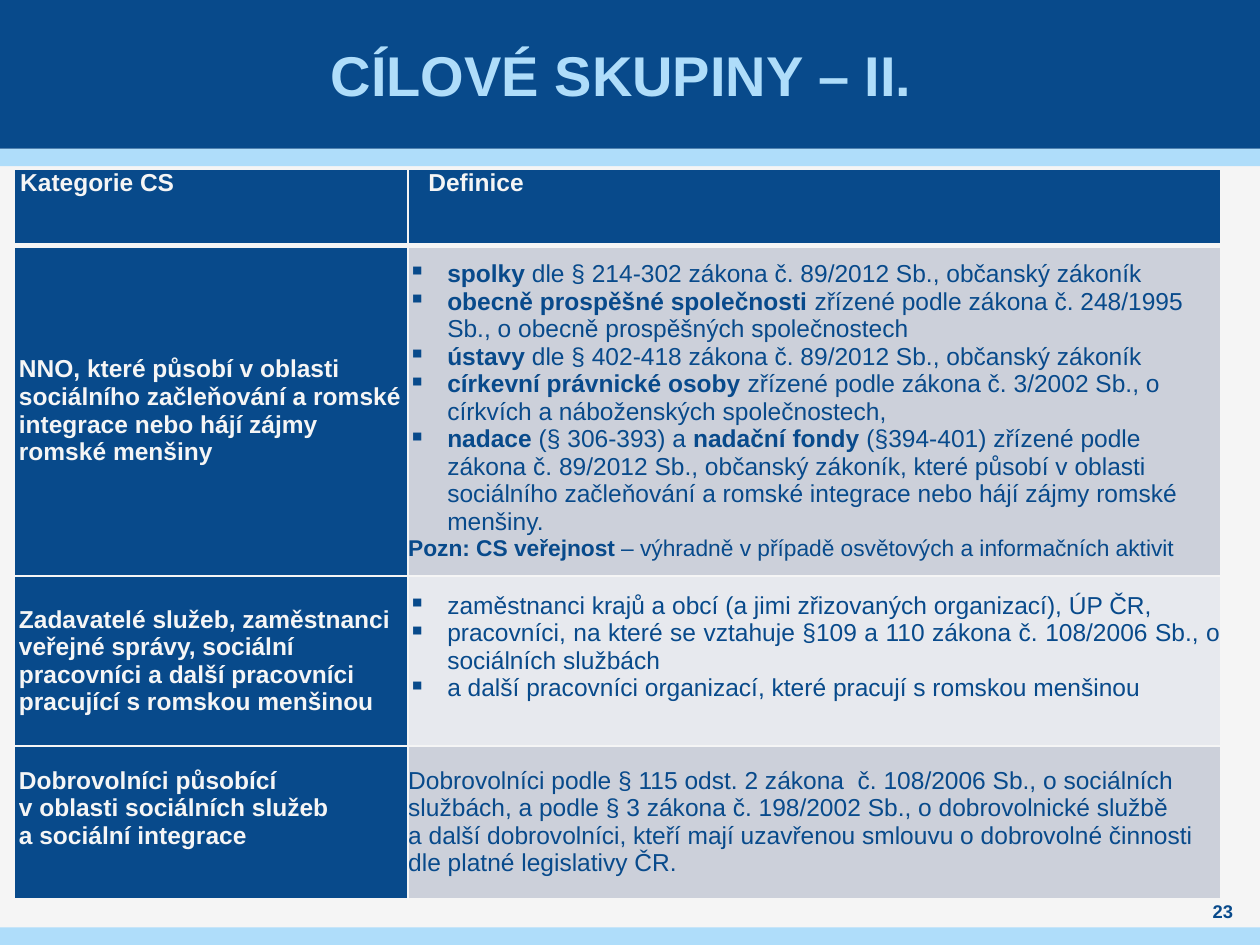
from dataclasses import dataclass

from lxml import etree
from pptx import Presentation
from pptx.dml.color import RGBColor
from pptx.enum.shapes import MSO_SHAPE
from pptx.enum.text import MSO_ANCHOR, PP_ALIGN
from pptx.oxml.ns import qn
from pptx.util import Inches, Pt

RECTANGLE = MSO_SHAPE.RECTANGLE
MIDDLE, TOP = MSO_ANCHOR.MIDDLE, MSO_ANCHOR.TOP
LEFT, CENTER, JUSTIFY = PP_ALIGN.LEFT, PP_ALIGN.CENTER, PP_ALIGN.JUSTIFY
TITLE_ONLY = 5


@dataclass(frozen=True)
class Theme:
    font: str = "Arial"
    navy: str = "084A8B"
    sky: str = "AFDDFA"
    paper: str = "F5F5F5"
    row_dark: str = "CCD0DA"
    row_light: str = "E7E9EE"
    title_size: float = 32
    body_size: float = 14
    note_size: float = 13
    number_size: float = 10.5
    border: float = 1
    header_border: float = 3


@dataclass(frozen=True)
class Line:
    """One paragraph; text between ** marks is bold."""
    text: str
    indent: float = 0
    bullet: bool = False
    align: PP_ALIGN = LEFT
    size: float = Theme.body_size


@dataclass(frozen=True)
class Cell:
    lines: list
    fill: str
    color: str
    anchor: MSO_ANCHOR = MIDDLE
    bottom: float = 0


class SlideBuilder:
    def __init__(self, slide, theme):
        self.slide = slide
        self.theme = theme
        background = slide.background.fill
        background.solid()
        background.fore_color.rgb = RGBColor.from_string(theme.paper)

    def band(self, top, height, color):
        shape = self.slide.shapes.add_shape(
            RECTANGLE, 0, Inches(top), Inches(10), Inches(height))
        shape.shadow.inherit = False
        shape.fill.solid()
        shape.fill.fore_color.rgb = RGBColor.from_string(color)
        shape.line.fill.background()

    def format_font(self, font, size, color, bold):
        font.name = self.theme.font
        font.size = Pt(size)
        font.bold = bold
        font.color.rgb = RGBColor.from_string(color)

    def single_line(self, shape, text, size, color, side_margin=0):
        frame = shape.text_frame
        frame.text = text
        frame.word_wrap = True
        frame.vertical_anchor = MIDDLE
        frame.margin_top = frame.margin_bottom = 0
        frame.margin_left = frame.margin_right = Inches(side_margin)
        paragraph = frame.paragraphs[0]
        paragraph.alignment = CENTER
        self.format_font(paragraph.runs[0].font, size, color, True)

    def title(self, text):
        title = self.slide.shapes.title
        title.left, title.top = Inches(0.39), 0
        title.width, title.height = Inches(9.21), Inches(1.18)
        self.single_line(title, text, self.theme.title_size, self.theme.sky, 0.04)
        # The title lies in front of the bands
        title.element.getparent().append(title.element)

    def page_number(self, text):
        box = self.slide.shapes.add_textbox(
            Inches(9.45), Inches(7.13), Inches(0.51), Inches(0.2))
        self.single_line(box, text, self.theme.number_size, self.theme.navy)

    def fill_paragraph(self, paragraph, line, color):
        paragraph.alignment = line.align
        properties = paragraph._p.get_or_add_pPr()
        properties.set("marL", str(Inches(line.indent)))
        properties.set("indent", str(-Inches(line.indent) if line.bullet else 0))
        if line.bullet:
            etree.SubElement(properties, qn("a:buChar"), char="▪")
        parts = line.text.split("**")
        if len(parts) == 1:
            paragraph.text = line.text
            for run in paragraph.runs:
                self.format_font(run.font, line.size, color, False)
            return
        for index, part in enumerate(parts):
            if part:
                run = paragraph.add_run()
                run.text = part
                self.format_font(run.font, line.size, color, index % 2 == 1)

    def cell_borders(self, cell, top, bottom):
        properties = cell._tc.get_or_add_tcPr()
        widths = {"lnL": self.theme.border, "lnR": self.theme.border,
                  "lnT": top, "lnB": bottom}
        for tag, width in widths.items():
            border = etree.SubElement(properties, qn(f"a:{tag}"), w=str(Pt(width)))
            fill = etree.SubElement(border, qn("a:solidFill"))
            etree.SubElement(fill, qn("a:srgbClr"), val=self.theme.paper)

    def table(self, left, top, widths, heights, rows):
        table = self.slide.shapes.add_table(
            len(rows), len(widths), Inches(left), Inches(top),
            Inches(sum(widths)), Inches(sum(heights))).table
        for column, width in zip(table.columns, widths):
            column.width = Inches(width)
        for row_index, (height, row) in enumerate(zip(heights, rows)):
            table.rows[row_index].height = Inches(height)
            for column_index, content in enumerate(row):
                cell = table.cell(row_index, column_index)
                cell.margin_left = cell.margin_right = cell.margin_top = 0
                cell.margin_bottom = Inches(content.bottom)
                cell.vertical_anchor = content.anchor
                self.cell_borders(
                    cell,
                    self.theme.header_border if row_index == 1 else self.theme.border,
                    self.theme.header_border if row_index == 0 else self.theme.border)
                cell.fill.solid()
                cell.fill.fore_color.rgb = RGBColor.from_string(content.fill)
                frame = cell.text_frame
                for index, line in enumerate(content.lines):
                    paragraph = frame.add_paragraph() if index else frame.paragraphs[0]
                    self.fill_paragraph(paragraph, line, content.color)


def heading(*texts, indent=0.04, align=LEFT, anchor=MIDDLE, bottom=0):
    lines = [Line(f"**{text}**", indent, align=align) for text in texts]
    return Cell(lines, Theme.navy, Theme.paper, anchor, bottom)


def bullets(*texts, align=LEFT):
    return [Line(text, 0.31, True, align) for text in texts]


def main():
    theme = Theme()
    presentation = Presentation()
    presentation.slide_width, presentation.slide_height = Inches(10), Inches(7.5)
    slide = presentation.slides.add_slide(presentation.slide_layouts[TITLE_ONLY])
    builder = SlideBuilder(slide, theme)

    builder.band(1.18, 0.14, theme.sky)
    builder.band(0, 1.18, theme.navy)
    builder.band(7.36, 0.14, theme.sky)
    builder.title("CÍLOVÉ SKUPINY – II. ")

    organisations = bullets(
        "**spolky** dle § 214-302 zákona č. 89/2012 Sb., občanský zákoník",
        "**obecně prospěšné společnosti **zřízené podle zákona č. 248/1995 Sb., "
        "o obecně prospěšných společnostech",
        "**ústavy** dle § 402-418 zákona č. 89/2012 Sb., občanský zákoník",
        "**církevní právnické osoby **zřízené podle zákona č. 3/2002 Sb., "
        "o církvích a náboženských společnostech,",
        "**nadace** (§ 306-393) a **nadační fondy **(§394-401) zřízené podle zákona "
        "č. 89/2012 Sb., občanský zákoník, které působí v oblasti sociálního "
        "začleňování a romské integrace nebo hájí zájmy romské menšiny.")
    note = Line("**Pozn: CS veřejnost **– výhradně v případě osvětových "
                "a informačních aktivit", size=theme.note_size)
    staff = bullets(
        "zaměstnanci krajů a obcí (a jimi zřizovaných organizací), ÚP ČR, ",
        "pracovníci, na které se vztahuje §109 a 110 zákona č. 108/2006 Sb., "
        "o sociálních službách",
        "a další pracovníci organizací, které pracují s romskou menšinou",
        align=JUSTIFY)
    volunteers = Line(
        "Dobrovolníci podle § 115 odst. 2 zákona  č. 108/2006 Sb., o sociálních "
        "službách, a podle § 3 zákona č. 198/2002 Sb., o dobrovolnické službě \v"
        "a další dobrovolníci, kteří mají uzavřenou smlouvu o dobrovolné činnosti "
        "dle platné legislativy ČR.")

    builder.table(0.11, 1.34, [3.13, 6.45], [0.61, 2.62, 1.35, 1.21], [
        [heading("Kategorie CS", indent=0.05, anchor=TOP),
         heading("Definice", indent=0.16, align=JUSTIFY, anchor=TOP)],
        [heading("NNO, které působí v oblasti sociálního začleňování a romské "
                 "integrace nebo hájí zájmy romské menšiny"),
         Cell(organisations + [note], theme.row_dark, theme.navy)],
        [heading("Zadavatelé služeb, zaměstnanci veřejné správy, sociální pracovníci "
                 "a další pracovníci pracující s romskou menšinou"),
         Cell(staff, theme.row_light, theme.navy, bottom=0.22)],
        [heading("Dobrovolníci působící", "v oblasti sociálních služeb",
                 "a sociální integrace", bottom=0.22),
         Cell([volunteers], theme.row_dark, theme.navy)],
    ])
    builder.page_number("23")
    presentation.save("out.pptx")


if __name__ == "__main__":
    main()
